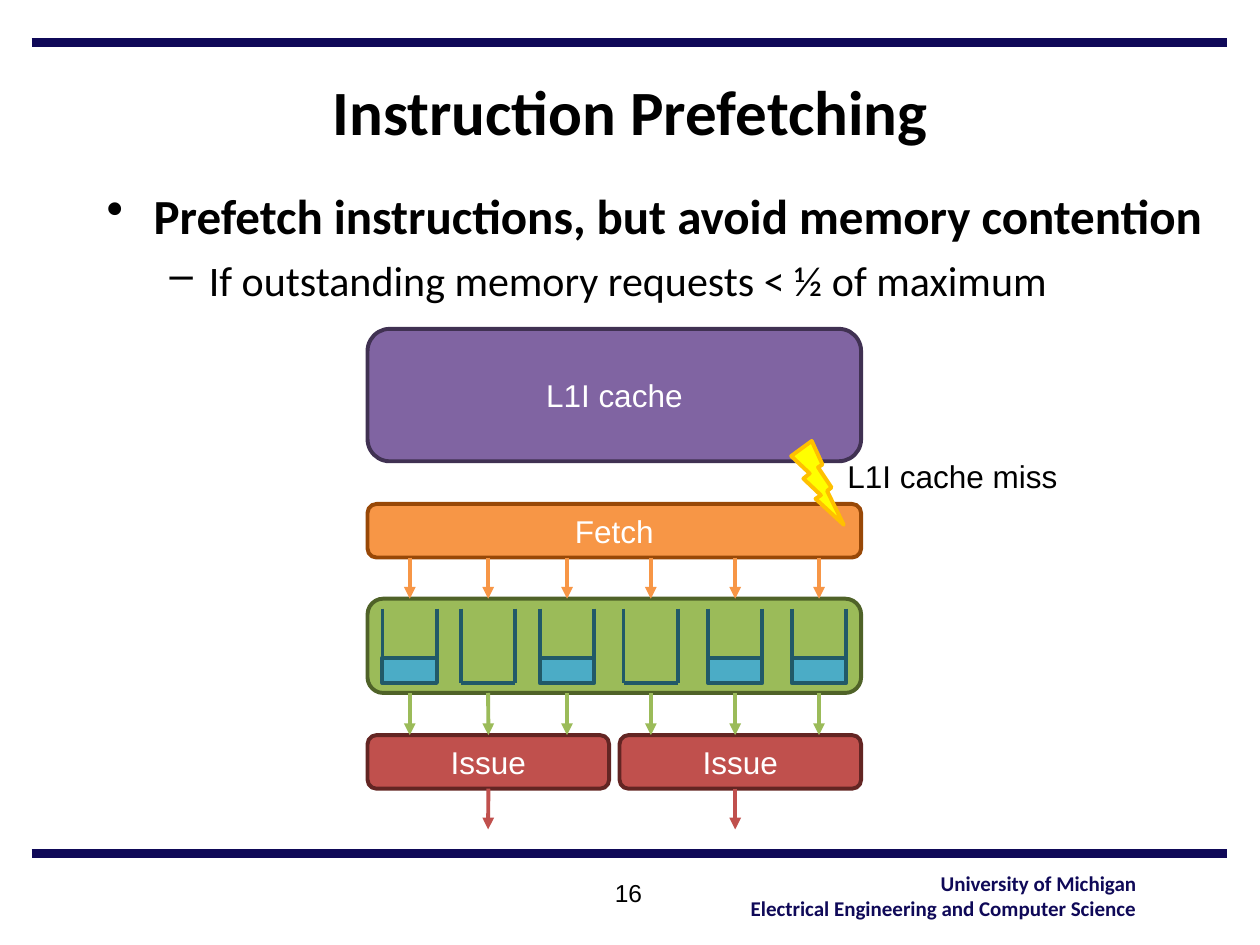
"""Build the slide on instruction prefetching with its fetch and issue diagram."""
import pptx
import pptx.util
import pptx.dml.color
import pptx.enum.shapes
import pptx.enum.text
import pptx.oxml
import pptx.oxml.ns

Cm, Pt = pptx.util.Cm, pptx.util.Pt
rgb = pptx.dml.color.RGBColor.from_string
Kind = pptx.enum.shapes.MSO_SHAPE
Align = pptx.enum.text.PP_ALIGN
Anchor = pptx.enum.text.MSO_ANCHOR
hues = {
    "navy": "0F0958", "black": "000000", "white": "FFFFFF",
    "orange": "F79646", "rust": "984807", "red": "C0504D", "wine": "632523",
    "green": "9BBB59", "moss": "4F6228", "blue": "4BACC6", "teal": "215968",
    "purple": "8064A2", "plum": "403152", "yellow": "FFFF00", "gold": "FFC000",
}


def write(frame, text, size=18, font="Arial", hue="black", bold=False,
          align=Align.CENTER, anchor=Anchor.TOP, wrap=True, marks=()):
    frame.word_wrap = wrap
    frame.vertical_anchor = anchor
    frame.text = text
    for para, (sign, left, hang, points, heavy, space) in zip(frame.paragraphs, marks):
        props = para._p.get_or_add_pPr()
        props.set("marL", str(Cm(left)))
        props.set("indent", str(-Cm(hang)))
        bullet = props.makeelement(pptx.oxml.ns.qn("a:buChar"), {"char": sign})
        props.append(bullet)
        para.space_before = Pt(space)
    for i, para in enumerate(frame.paragraphs):
        para.alignment = align
        para.font.size = Pt(marks[i][3] if marks else size)
        para.font.bold = marks[i][4] if marks else bold
        para.font.name = font
        para.font.color.rgb = rgb(hues[hue])


def link(x1, y1, x2, y2, hue, width=2.25, arrow=False):
    line = shapes.add_connector(pptx.enum.shapes.MSO_CONNECTOR.STRAIGHT,
                                Cm(x1), Cm(y1), Cm(x2), Cm(y2))
    line.line.color.rgb = rgb(hues[hue])
    line.line.width = Pt(width)
    props = line._element.spPr
    if arrow:
        stroke = line.line._get_or_add_ln()
        stroke.append(stroke.makeelement(pptx.oxml.ns.qn("a:tailEnd"), {"type": "triangle"}))
    props.append(props.makeelement(pptx.oxml.ns.qn("a:effectLst"), {}))
    return line


deck = pptx.Presentation()
deck.slide_width, deck.slide_height = Cm(25.4), Cm(19.05)
slide = deck.slides.add_slide(deck.slide_layouts[5])
shapes = slide.shapes

for y in (0.86, 17.2):
    link(0.64, y, 24.74, y, "navy", width=5)

title = shapes.title
title.left, title.top, title.width, title.height = Cm(0.64), Cm(1.07), Cm(24.13), Cm(2.31)
write(title.text_frame, "Instruction Prefetching", size=36, font="Calibri",
      bold=True, anchor=Anchor.MIDDLE)

points = [("•", 0.95, 0.95, 28, True, 0), ("–", 2.06, 0.79, 24, False, 6)]
notes = [
    ((1.9, 3.61, 22.86, 2.74),
     "Prefetch instructions, but avoid memory contention\n"
     "If outstanding memory requests < ½ of maximum",
     dict(font="Calibri", align=Align.LEFT, marks=points)),
    ((14.78, 17.42, 8.38, 1.27),
     "University of Michigan\nElectrical Engineering and Computer Science",
     dict(size=12, font="Calibri", hue="navy", bold=True, align=Align.RIGHT, wrap=False)),
    ((10.03, 17.58, 5.28, 1.27), "16", dict(size=14)),
]

left, wide, high = 7.41, 9.95, 1.08
fetch, pool, issue = 10.16, 12.07, 14.82
base, half = 13.77, 0.55
lanes = [8.26, 9.84, 11.43, 13.12, 14.82, 16.51]
full = [0, 2, 4, 5]

boxes = [
    (Kind.ROUNDED_RECTANGLE, left, 6.63, wide, 2.67, "purple", "plum", "L1I cache"),
    (Kind.ROUNDED_RECTANGLE, left, fetch, wide, high, "orange", "rust", "Fetch"),
    (Kind.ROUNDED_RECTANGLE, left, pool, wide, 1.9, "green", "moss", ""),
]
boxes += [(Kind.ROUNDED_RECTANGLE, x, issue, 4.87, high, "red", "wine", "Issue")
          for x in (left, 12.49)]
boxes += [(Kind.RECTANGLE, lanes[i] - half, 13.26, 2 * half, base - 13.26, "blue", "teal", "")
          for i in full]
boxes.append((Kind.LIGHTNING_BOLT, 15.95, 8.89, 1.06, 1.69, "yellow", "gold", ""))

made = []
for kind, x, y, w, h, fill, edge, text in boxes:
    box = shapes.add_shape(kind, Cm(x), Cm(y), Cm(w), Cm(h))
    box.shadow.inherit = False
    box.fill.solid()
    box.fill.fore_color.rgb = rgb(hues[fill])
    box.line.color.rgb = rgb(hues[edge])
    box.line.width = Pt(2.25)
    if text:
        write(box.text_frame, text, hue="white", anchor=Anchor.MIDDLE, wrap=False)
    made.append(box)
first = made[3]

for i, x in enumerate(lanes):
    link(x, fetch + high, x, pool, "orange", arrow=True)
    feed = link(x, pool + 1.9, x, issue, "green", arrow=True)
    for side in (-half, half):
        link(x + side, 12.27, x + side, base, "teal")
    link(x - half, base, x + half, base, "teal")
    if i in (1, 4):
        exit_line = link(x, issue + high, x, 16.72, "red", arrow=True)
    if i == 1:
        feed.end_connect(first, 0)
        exit_line.begin_connect(first, 2)

notes.append(((16.81, 9.09, 4.78, 1.02), "L1I cache miss", {}))
for spot, text, form in notes:
    note = shapes.add_textbox(*map(Cm, spot))
    write(note.text_frame, text, **form)

deck.save("out.pptx")
